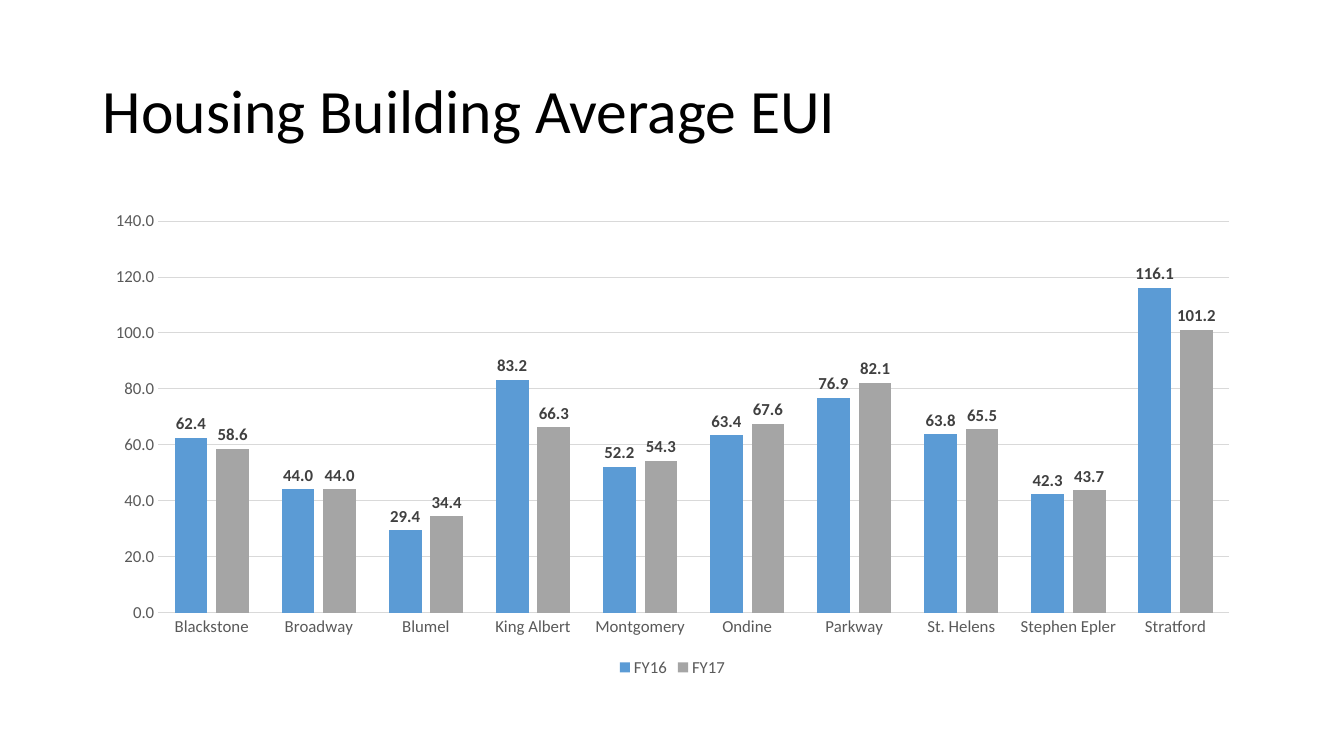
from typing import NamedTuple

from pptx import Presentation
from pptx import util as u
from pptx.chart import data as chart_data
from pptx.dml.color import RGBColor
from pptx.enum import chart as ch, text

BLACK = RGBColor(0x00, 0x00, 0x00)
DARK_GREY = RGBColor(0x40, 0x40, 0x40)
TEXT_GREY = RGBColor(0x59, 0x59, 0x59)
LINE_GREY = RGBColor(0xD9, 0xD9, 0xD9)
BLUE = RGBColor(0x5B, 0x9B, 0xD5)
GREY = RGBColor(0xA5, 0xA5, 0xA5)
FONT = "Calibri"
NUMBER_FORMAT = "0.0"


class FiscalYear(NamedTuple):
    name: str
    color: RGBColor
    eui: tuple[float, ...]


BUILDINGS = (
    "Blackstone", "Broadway", "Blumel", "King Albert", "Montgomery",
    "Ondine", "Parkway", "St. Helens", "Stephen Epler", "Stratford",
)
YEARS = (
    FiscalYear("FY16", BLUE, (62.4, 44, 29.4, 83.2, 52.2, 63.4, 76.9, 63.8, 42.3, 116.1)),
    FiscalYear("FY17", GREY, (58.6, 44, 34.4, 66.3, 54.3, 67.6, 82.1, 65.5, 43.7, 101.2)),
)


def style_font(font, size: float, color: RGBColor, bold: bool = False) -> None:
    font.name = FONT
    font.size = u.Pt(size)
    font.bold = bold
    font.color.rgb = color


def style_line(line) -> None:
    line.color.rgb = LINE_GREY
    line.width = u.Pt(0.75)


def add_title(slide) -> None:
    title = slide.shapes.title
    title.left, title.top = u.Inches(0.92), u.Inches(0.4)
    title.width, title.height = u.Inches(11.5), u.Inches(1.45)
    frame = title.text_frame
    frame.text = "Housing Building Average EUI"
    frame.word_wrap = True
    frame.vertical_anchor = text.MSO_ANCHOR.MIDDLE
    heading = frame.paragraphs[0]
    heading.alignment = text.PP_ALIGN.LEFT
    heading.line_spacing = 0.9
    style_font(heading.font, 44, BLACK)


def style_series(series, year: FiscalYear) -> None:
    series.format.fill.solid()
    series.format.fill.fore_color.rgb = year.color
    series.invert_if_negative = False
    labels = series.data_labels
    labels.show_value = True
    labels.position = ch.XL_LABEL_POSITION.OUTSIDE_END
    labels.number_format = NUMBER_FORMAT
    labels.number_format_is_linked = False
    style_font(labels.font, 12, DARK_GREY, bold=True)


def add_eui_chart(slide) -> None:
    eui = chart_data.CategoryChartData(number_format=NUMBER_FORMAT)
    eui.categories = BUILDINGS
    for year in YEARS:
        eui.add_series(year.name, year.eui)
    chart = slide.shapes.add_chart(
        ch.XL_CHART_TYPE.COLUMN_CLUSTERED,
        u.Inches(0.92), u.Inches(2), u.Inches(11.5), u.Inches(4.76), eui,
    ).chart
    style_font(chart.font, 10, BLACK)
    chart.has_title = False

    chart.has_legend = True
    chart.legend.position = ch.XL_LEGEND_POSITION.BOTTOM
    chart.legend.include_in_layout = False
    style_font(chart.legend.font, 12, TEXT_GREY)

    for axis in (chart.category_axis, chart.value_axis):
        axis.major_tick_mark = ch.XL_TICK_MARK.NONE
        axis.minor_tick_mark = ch.XL_TICK_MARK.NONE
        style_font(axis.tick_labels.font, 12, TEXT_GREY)
    style_line(chart.category_axis.format.line)

    eui_axis = chart.value_axis
    eui_axis.minimum_scale, eui_axis.maximum_scale = 0, 140
    eui_axis.major_unit = 20
    eui_axis.format.line.fill.background()
    eui_axis.tick_labels.number_format = NUMBER_FORMAT
    eui_axis.tick_labels.number_format_is_linked = False
    eui_axis.has_major_gridlines = True
    style_line(eui_axis.major_gridlines.format.line)

    columns = chart.plots[0]
    columns.vary_by_categories = False
    columns.gap_width = 100
    columns.overlap = -27
    for series, year in zip(columns.series, YEARS):
        style_series(series, year)


def main() -> None:
    deck = Presentation()
    deck.slide_width, deck.slide_height = u.Inches(13.33), u.Inches(7.5)
    slide = deck.slides.add_slide(deck.slide_layouts.get_by_name("Title Only"))
    add_title(slide)
    add_eui_chart(slide)
    deck.save("out.pptx")


if __name__ == "__main__":
    main()
